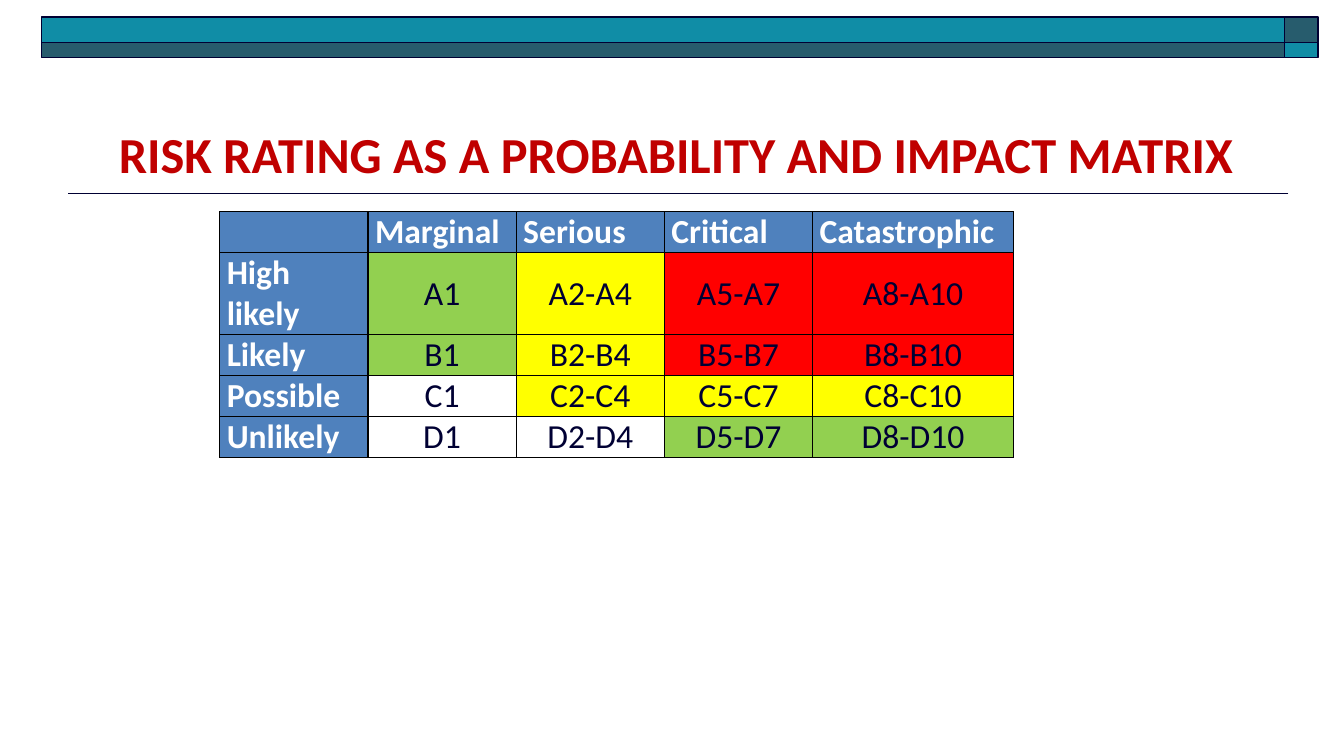
from dataclasses import dataclass

from lxml.etree import SubElement
from pptx import Presentation
from pptx.dml.color import RGBColor
from pptx.enum.shapes import MSO_CONNECTOR as Connector, MSO_SHAPE as Preset
from pptx.enum.text import MSO_ANCHOR as Anchor, PP_ALIGN as Align
from pptx.oxml.ns import qn
from pptx.util import Inches, Pt

SLIDE_W, SLIDE_H = Inches(13.33), Inches(7.5)
NAVY, TEAL, SLATE = "000033", "108DA6", "275C6D"
WHITE, BLACK, CRIMSON, LABEL_BLUE = "FFFFFF", "000000", "C00000", "4F81BD"
RATING_FILLS = {"W": WHITE, "G": "92D050", "Y": "FFFF00", "R": "FF0000"}

IMPACTS = ("", "Marginal", "Serious", "Critical", "Catastrophic")
SCORES = ("1", "2-{0}4", "5-{0}7", "8-{0}10")
IMPACT_WIDTHS = (11.03, 11.03, 11.03, 11.03, 14.93)
ROW_HEIGHT = 5.43


@dataclass(frozen=True)
class Band:
    """A header block, placed in percent of the slide."""
    left: float
    top: float
    width: float
    height: float
    color: str


@dataclass(frozen=True)
class Probability:
    """A matrix row: its label, code letter, rating colours and text lines."""
    label: str
    code: str
    ratings: str
    lines: int = 1


BAR_LEFT, BAR_WIDTH, END_WIDTH = 3.08, 92.5, 2.48
BAR_TOP, UPPER, LOWER = 2.27, 3.33, 2
BAR_END, BAR_SPLIT = BAR_LEFT + BAR_WIDTH, BAR_TOP + UPPER
BANDS = (
    Band(BAR_END, BAR_TOP, END_WIDTH, UPPER, SLATE),
    Band(BAR_LEFT, BAR_TOP, BAR_WIDTH, UPPER, TEAL),
    Band(BAR_LEFT, BAR_SPLIT, BAR_WIDTH, LOWER, SLATE),
    Band(BAR_END, BAR_SPLIT, END_WIDTH, LOWER, TEAL),
)
PROBABILITIES = (
    Probability("High likely", "A", "GYRR", 2),
    Probability("Likely", "B", "GYRR"),
    Probability("Possible", "C", "WYYY"),
    Probability("Unlikely", "D", "WWGG"),
)


def x(percent: float) -> int:
    """Turn a percentage of the slide width into a length."""
    return round(SLIDE_W * percent / 100)


def y(percent: float) -> int:
    """Turn a percentage of the slide height into a length."""
    return round(SLIDE_H * percent / 100)


def paint(target, color: str) -> None:
    """Fill a shape, cell or line with a solid colour."""
    target.fill.solid()
    target.fill.fore_color.rgb = RGBColor.from_string(color)


def apply(target, settings: dict) -> None:
    """Set attributes from a dict of format values."""
    for name, value in settings.items():
        setattr(target, name, value)


def write(frame, text: str, size: int, color: str, bold: bool, align: Align) -> None:
    """Write one formatted paragraph."""
    paragraph = frame.paragraphs[0]
    paragraph.alignment = align
    run = paragraph.add_run()
    run.text = text
    apply(run.font, {"name": "Calibri", "size": Pt(size), "bold": bold})
    run.font.color.rgb = RGBColor.from_string(color)


def draw_band(slide, band: Band) -> None:
    """Draw one outlined header block."""
    block = slide.shapes.add_shape(
        Preset.RECTANGLE, x(band.left), y(band.top), x(band.width), y(band.height))
    block.shadow.inherit = False
    paint(block, band.color)
    paint(block.line, NAVY)
    block.line.width = Pt(1)


def draw_title(slide) -> None:
    """Draw the title and the rule below it."""
    rule = slide.shapes.add_connector(
        Connector.STRAIGHT, x(95.87), y(25.6), x(5.03), y(25.6))
    paint(rule.line, NAVY)
    rule.line.width = Pt(1)
    SubElement(rule._element.spPr, qn("a:effectLst"))
    title = slide.shapes.add_textbox(x(8.1), y(15.6), x(88.15), y(4.93)).text_frame
    title.word_wrap = True
    write(title, "RISK RATING AS A PROBABILITY AND IMPACT MATRIX",
          36, CRIMSON, True, Align.LEFT)


def draw_cell(cell, text: str, fill: str, is_label: bool) -> None:
    """Format one matrix cell with its borders, fill and text."""
    properties = cell._tc.get_or_add_tcPr()
    for side in "LRTB":
        border = SubElement(properties, qn(f"a:ln{side}"), w=str(Pt(1)))
        SubElement(SubElement(border, qn("a:solidFill")), qn("a:srgbClr"), val=BLACK)
    paint(cell, fill)
    apply(cell, {
        "margin_left": Inches(0.07), "margin_right": Inches(0.07),
        "margin_top": 0, "margin_bottom": 0,
        "vertical_anchor": Anchor.TOP if is_label else Anchor.MIDDLE,
    })
    if text:
        write(cell.text_frame, text, 24, WHITE if is_label else NAVY, is_label,
              Align.LEFT if is_label else Align.CENTER)


def draw_matrix(slide) -> None:
    """Draw the probability and impact table."""
    line_counts = [1] + [level.lines for level in PROBABILITIES]
    matrix = slide.shapes.add_table(
        len(line_counts), len(IMPACTS), x(16.35), y(28),
        x(sum(IMPACT_WIDTHS)), y(ROW_HEIGHT * sum(line_counts))).table
    apply(matrix, {"first_row": False, "horz_banding": False})
    for column, width in zip(matrix.columns, IMPACT_WIDTHS):
        column.width = x(width)
    for row, lines in zip(matrix.rows, line_counts):
        row.height = y(ROW_HEIGHT * lines)
    for column, impact in enumerate(IMPACTS):
        draw_cell(matrix.cell(0, column), impact, LABEL_BLUE, True)
    for row, level in enumerate(PROBABILITIES, 1):
        draw_cell(matrix.cell(row, 0), level.label, LABEL_BLUE, True)
        for column, (score, rating) in enumerate(zip(SCORES, level.ratings), 1):
            draw_cell(matrix.cell(row, column), level.code + score.format(level.code),
                      RATING_FILLS[rating], False)


def main() -> None:
    """Build and save the risk matrix slide."""
    deck = Presentation()
    apply(deck, {"slide_width": SLIDE_W, "slide_height": SLIDE_H})
    slide = deck.slides.add_slide(deck.slide_layouts[6])
    for band in BANDS:
        draw_band(slide, band)
    draw_title(slide)
    draw_matrix(slide)
    deck.save("out.pptx")


if __name__ == "__main__":
    main()
